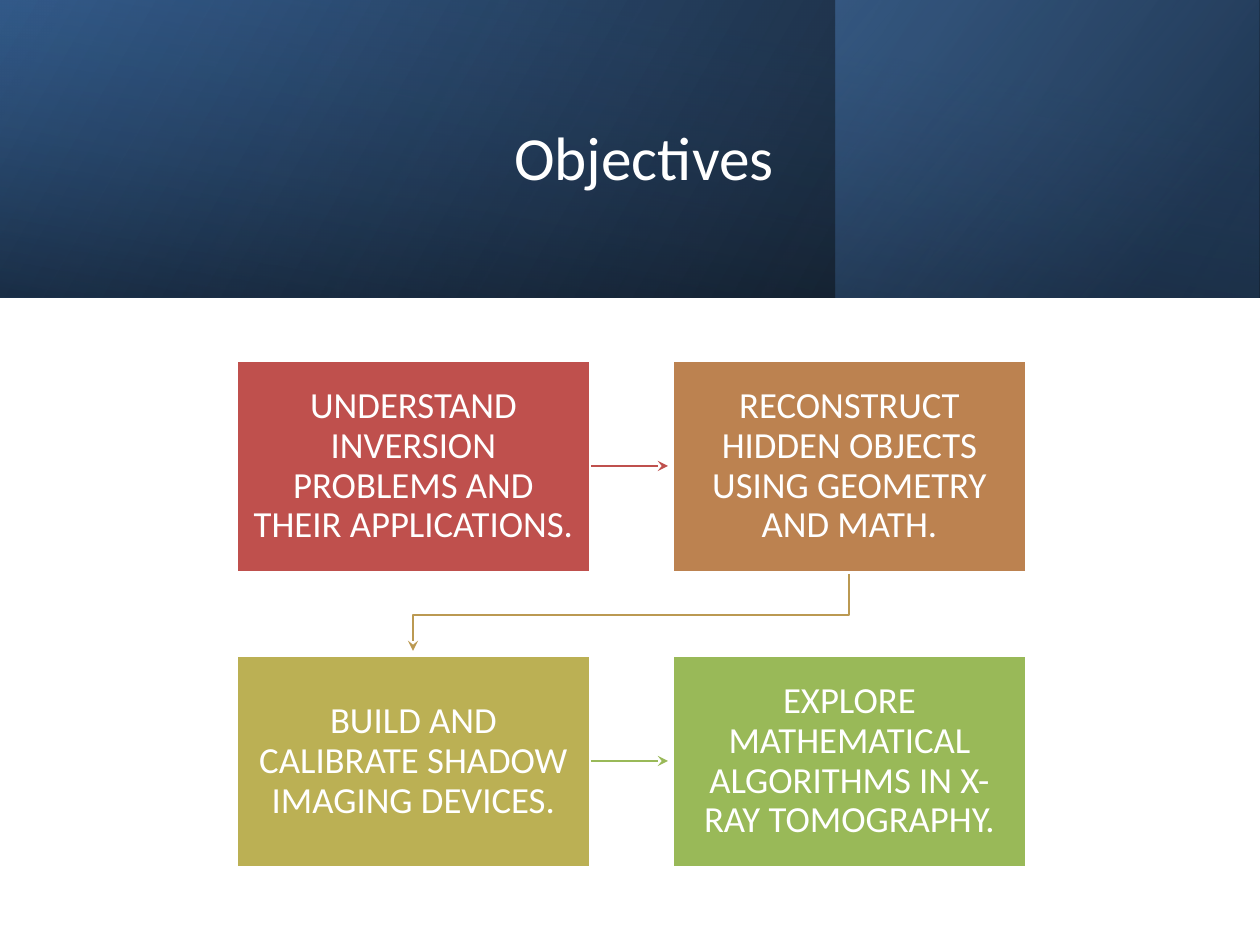
from typing import NamedTuple

from lxml import etree
from pptx import Presentation
from pptx.dml.color import RGBColor
from pptx.enum.shapes import MSO_CONNECTOR, MSO_SHAPE
from pptx.enum.text import MSO_ANCHOR, PP_ALIGN
from pptx.oxml.ns import qn
from pptx.util import Pt

RECT = MSO_SHAPE.RECTANGLE
LINE = MSO_CONNECTOR.STRAIGHT
MID = MSO_ANCHOR.MIDDLE
MIDDLE = PP_ALIGN.CENTER

FONT = "Calibri"
WHITE = "FFFFFF"
WIDE, HIGH = 1260, 945
BAND = 298
BOX_W, BOX_H = 355, 213
LEFT, TOP = 236, 360
STEP_X, STEP_Y = 436, 295
PAD = 17


class Stop(NamedTuple):
    pos: int
    color: str
    alpha: int


class Layer(NamedTuple):
    x: int
    y: int
    w: int
    h: int
    turn: int
    angle: int
    stops: list[Stop]


class Goal(NamedTuple):
    col: int
    row: int
    color: str
    text: str


LAYERS = [
    Layer(0, 0, WIDE, BAND, 0, 330,
          [Stop(0, "000000", 96), Stop(100, "366092", 100)]),
    Layer(836, 0, 423, BAND, 0, 320,
          [Stop(0, "244061", 68), Stop(19, "244061", 68),
           Stop(100, "4F81BD", 48)]),
    Layer((WIDE - BAND) // 2, (BAND - WIDE) // 2, BAND, WIDE, 270, 350,
          [Stop(0, "366092", 16), Stop(23, "366092", 16),
           Stop(99, "000000", 45), Stop(100, "000000", 45)]),
]

GOALS = [
    Goal(0, 0, "BF504D",
         "UNDERSTAND INVERSION PROBLEMS AND THEIR APPLICATIONS."),
    Goal(1, 0, "BC8250",
         "RECONSTRUCT HIDDEN OBJECTS USING GEOMETRY AND MATH."),
    Goal(0, 1, "BBB054", "BUILD AND CALIBRATE SHADOW IMAGING DEVICES."),
    Goal(1, 1, "99B958",
         "EXPLORE MATHEMATICAL ALGORITHMS IN X-RAY TOMOGRAPHY."),
]


def px(n: float) -> int:
    return round(n * 914400 / 126)


def rgb(code: str) -> RGBColor:
    return RGBColor.from_string(code)


def add_text(shape, text: str, size: int, space: float, pad: int) -> None:
    frame = shape.text_frame
    frame.word_wrap = True
    frame.vertical_anchor = MID
    frame.margin_left = frame.margin_right = px(pad)
    frame.margin_top = frame.margin_bottom = px(pad)
    para = frame.paragraphs[0]
    para.alignment = MIDDLE
    para.line_spacing = space
    run = para.add_run()
    run.text = text
    run.font.name = FONT
    run.font.size = Pt(size)
    run.font.color.rgb = rgb(WHITE)


def add_layer(slide, layer: Layer) -> None:
    shape = slide.shapes.add_shape(
        RECT, px(layer.x), px(layer.y), px(layer.w), px(layer.h))
    shape.shadow.inherit = False
    shape.line.fill.background()
    shape.rotation = layer.turn
    props = shape.element.spPr
    props.find(qn("a:xfrm")).set("flipH", "1")
    # Gradient with transparent stops
    grad = etree.Element(qn("a:gradFill"), rotWithShape="1")
    items = etree.SubElement(grad, qn("a:gsLst"))
    for stop in layer.stops:
        item = etree.SubElement(items, qn("a:gs"), pos=str(stop.pos * 1000))
        color = etree.SubElement(item, qn("a:srgbClr"), val=stop.color)
        etree.SubElement(color, qn("a:alpha"), val=str(stop.alpha * 1000))
    etree.SubElement(grad, qn("a:lin"), ang=str(layer.angle * 60000),
                     scaled="0")
    props.find(qn("a:prstGeom")).addnext(grad)


def add_goal(slide, goal: Goal) -> None:
    shape = slide.shapes.add_shape(
        RECT, px(LEFT + goal.col * STEP_X), px(TOP + goal.row * STEP_Y),
        px(BOX_W), px(BOX_H))
    shape.shadow.inherit = False
    shape.fill.solid()
    shape.fill.fore_color.rgb = rgb(goal.color)
    shape.line.color.rgb = rgb(WHITE)
    shape.line.width = Pt(2)
    add_text(shape, goal.text, 21, 0.9, PAD)


def style_arrow(shape, color: str) -> None:
    shape.line.color.rgb = rgb(color)
    shape.line.width = Pt(0.75)
    line = shape.line._get_or_add_ln()
    etree.SubElement(line, qn("a:tailEnd"), type="stealth")


def add_arrow(slide, row: int, color: str) -> None:
    y = TOP + row * STEP_Y + BOX_H // 2
    start = LEFT + BOX_W
    arrow = slide.shapes.add_connector(
        LINE, px(start), px(y), px(start + 77), px(y))
    style_arrow(arrow, color)
    etree.SubElement(arrow.element.spPr, qn("a:effectLst"))


def add_bend(slide, color: str) -> None:
    end = LEFT + BOX_W // 2
    start = end + STEP_X
    top = TOP + BOX_H + 1
    mid = TOP + (BOX_H + STEP_Y) // 2 + 1
    path = slide.shapes.build_freeform(px(start), px(top))
    path.add_line_segments(
        [(px(start), px(mid)), (px(end), px(mid)), (px(end), px(top + 77))],
        close=False)
    bend = path.convert_to_shape()
    bend.fill.background()
    style_arrow(bend, color)
    bend.shadow.inherit = False


def main() -> None:
    deck = Presentation()
    deck.slide_width, deck.slide_height = px(WIDE), px(HIGH)
    slide = deck.slides.add_slide(deck.slide_layouts[6])

    # Title band
    for layer in LAYERS:
        add_layer(slide, layer)
    title = slide.shapes.add_textbox(px(142), px(48), px(1004), px(217))
    add_text(title, "Objectives", 35, 1.0, 10)

    # Flow of goals
    for goal in GOALS:
        add_goal(slide, goal)
    add_arrow(slide, 0, "BF504D")
    add_bend(slide, "BB9952")
    add_arrow(slide, 1, "99B958")

    deck.save("out.pptx")


if __name__ == "__main__":
    main()
